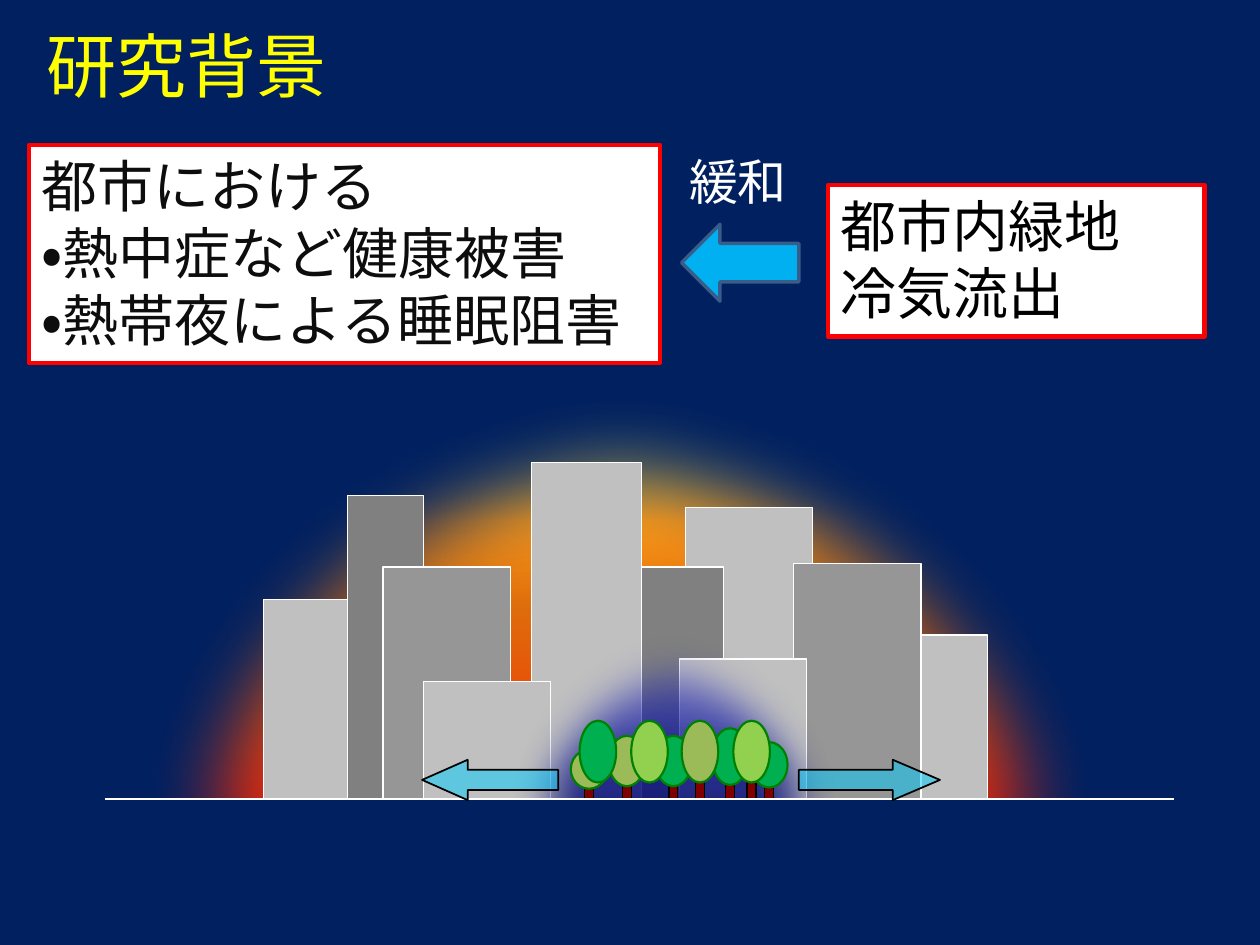
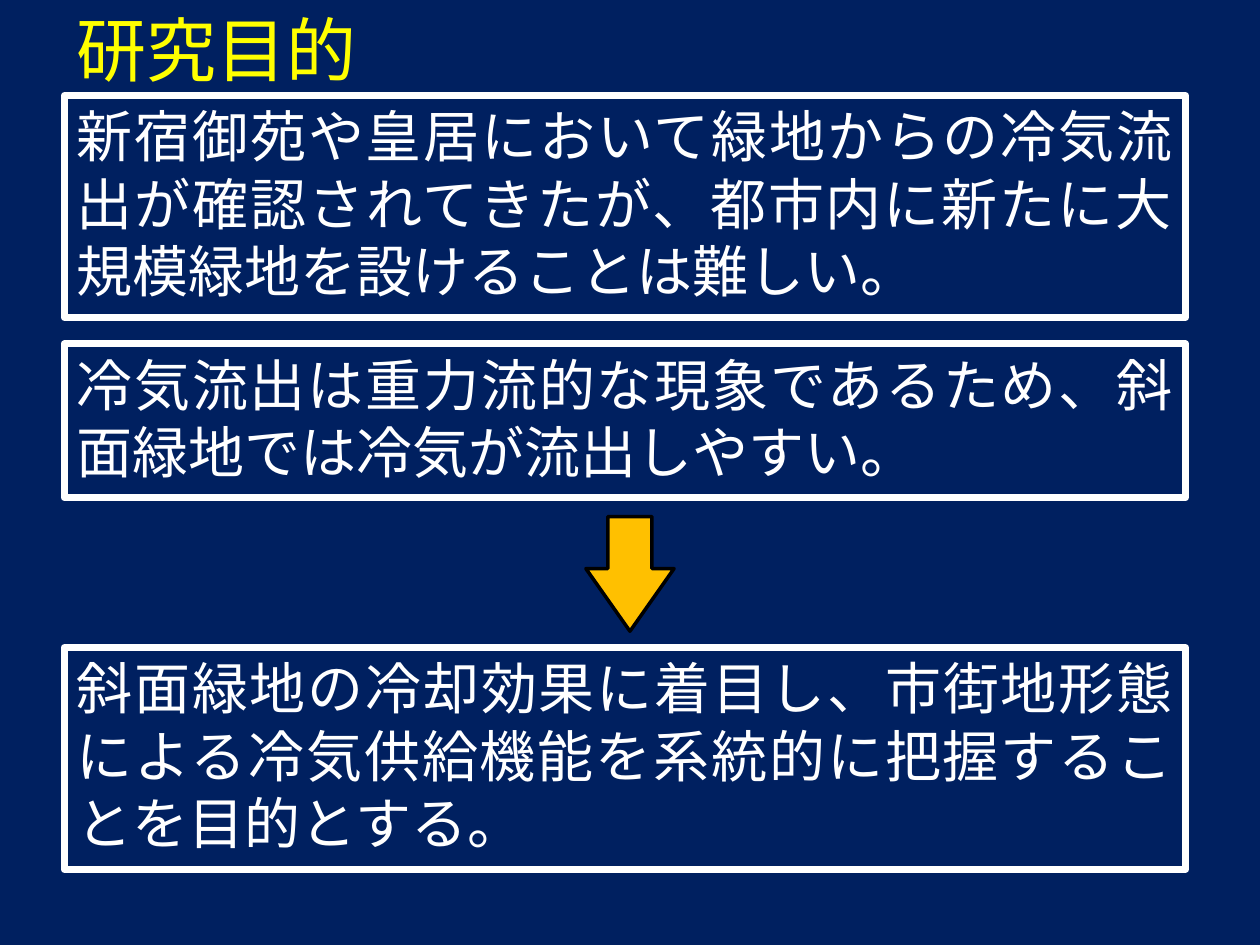
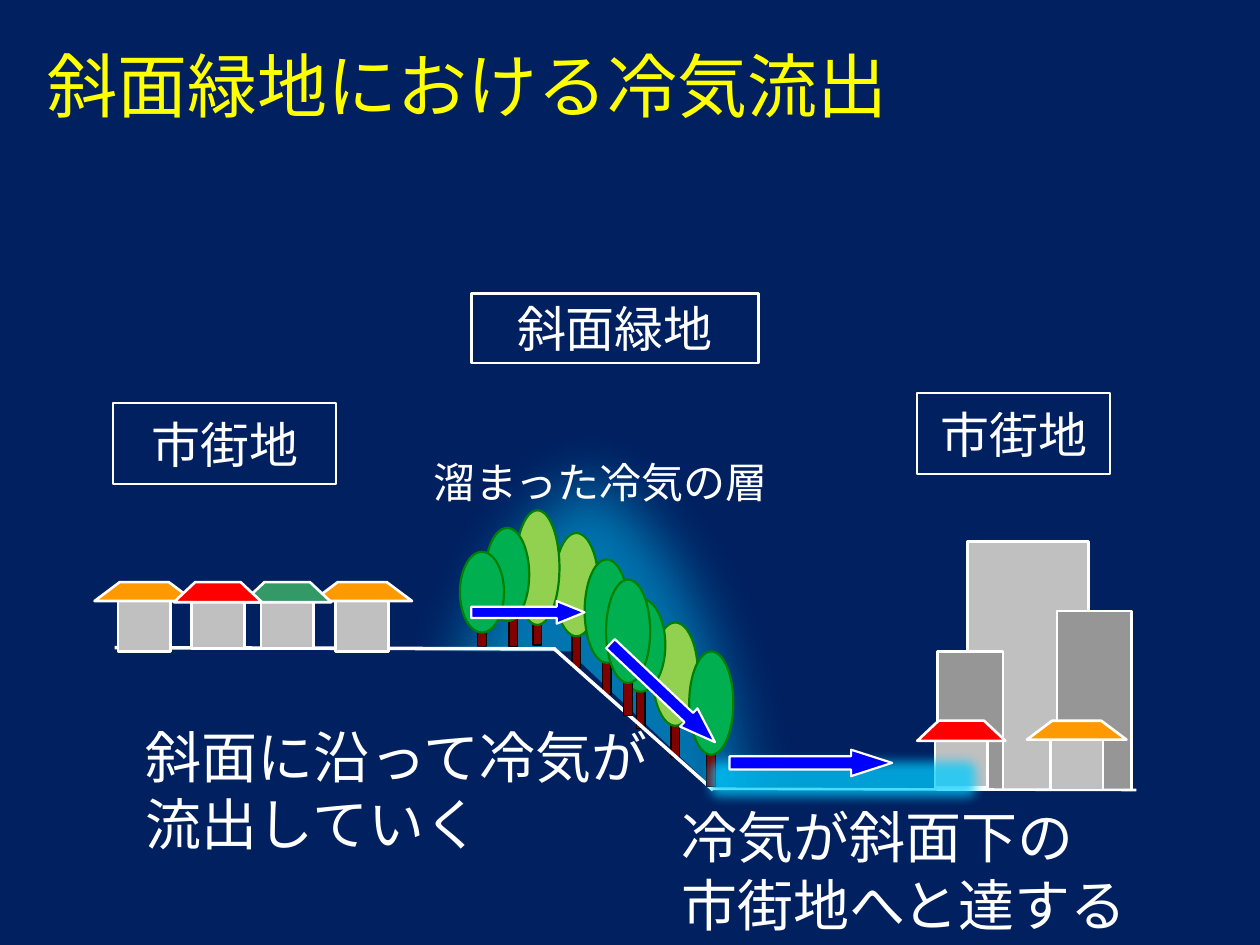
"""Build three slides on cool air flowing out of urban green space."""
from pptx import Presentation
from pptx.dml.color import RGBColor
from pptx.enum.lang import MSO_LANGUAGE_ID
from pptx.enum.shapes import MSO_CONNECTOR, MSO_SHAPE
from pptx.enum.text import MSO_ANCHOR, MSO_AUTO_SIZE, PP_ALIGN
from pptx.oxml.ns import qn
from pptx.util import Inches, Pt
from lxml.etree import SubElement

FONT = "Calibri"
NAVY, WHITE, BLACK, YELLOW, RED = "002060", "FFFFFF", "000000", "FFFF00", "FF0000"
LIGHT, MIDDLE, DARK = "C0C0C0", "969696", "808080"
GREEN, LIME, OLIVE = "00B050", "92D050", "9BBB59"
TRUNK, LEAF_EDGE = "800000", "008000"
ORANGE, TEAL, SKY, BLUE = "FF9900", "339966", "00CCFF", "0000FF"
JUSTIFY, CENTER, LEFT = PP_ALIGN.JUSTIFY, PP_ALIGN.CENTER, PP_ALIGN.LEFT
MIDDLE_ANCHOR = MSO_ANCHOR.MIDDLE

HEAT_STOPS = [(6, "FFF759", 63), (17, "FF9E1A", 100), (27, "FF7A00", 87),
              (61, "FF0300", 100), (99, "4D0808", 100), (100, "FF2D00", 56)]
COOL_STOPS = [(8, "181CC7", 35), (40, "0A128C", 82), (100, "000000", 100),
              (100, "7005D4", 100), (100, "8C3D91", 100)]
CITY_BLOCKS = [
    (5.44, 4.03, 1.01, 2.33, LIGHT), (2.09, 4.76, 0.81, 1.59, LIGHT),
    (2.76, 3.93, 0.6, 2.41, DARK), (3.04, 4.5, 1.01, 1.85, MIDDLE),
    (4.73, 4.5, 1.01, 1.85, DARK), (4.22, 3.67, 0.87, 2.67, LIGHT),
    (3.36, 5.41, 1.01, 0.96, LIGHT), (7.07, 5.04, 0.77, 1.31, LIGHT),
    (6.3, 4.47, 1.01, 1.88, MIDDLE), (5.39, 5.23, 1.01, 1.12, LIGHT)]
PARK_GROUND, PARK_CROWN_WIDTH = 6.36, 0.29
PARK_TREES = [
    (4.83, 5.84, 0.4, OLIVE, True), (5.2, 5.84, 0.4, GREEN, True),
    (5.65, 5.78, 0.45, GREEN, True), (4.53, 5.95, 0.31, OLIVE, True),
    (5.96, 5.89, 0.36, GREEN, True), (4.6, 5.72, 0.49, GREEN, False),
    (5.01, 5.72, 0.49, LIME, False), (5.41, 5.72, 0.49, OLIVE, True),
    (5.82, 5.72, 0.49, LIME, True)]

PURPOSES = [
    (0.76, 1.76, "新宿御苑や皇居において緑地からの冷気流出が確認されてきたが、都市内に新たに大規模緑地を設けることは難しい。"),
    (2.73, 1.22, "冷気流出は重力流的な現象であるため、斜面緑地では冷気が流出しやすい。"),
    (5.14, 1.76, "斜面緑地の冷却効果に着目し、市街地形態による冷気供給機能を系統的に把握することを目的とする。")]

HILL_MASKS = [(MSO_SHAPE.RECTANGLE, (0.51, 5.17, 4.09, 2.55), 0),
              (MSO_SHAPE.RIGHT_TRIANGLE, (4.53, 5.34, 2.05, 1.63), 4.9),
              (MSO_SHAPE.RECTANGLE, (3.27, 6.27, 4.1, 1.34), 0)]
BACK_TREES = [
    (5.18, 4.94, 0.36, 0.82, LIME, 6.01, 0), (4.4, 4.23, 0.35, 0.82, LIME, 5.3, 0),
    (4.64, 4.44, 0.35, 0.82, GREEN, 5.51, 0), (4.89, 4.75, 0.39, 0.74, GREEN, 5.78, 0),
    (4.09, 4.05, 0.35, 0.91, LIME, 5.12, 0), (3.85, 4.19, 0.35, 0.74, GREEN, 5.13, 0.05),
    (3.65, 4.38, 0.35, 0.64, GREEN, 5.13, 0)]
FRONT_TREES = [(4.81, 4.6, 0.35, 0.82, GREEN, 5.68, 0),
               (5.47, 5.17, 0.35, 0.82, GREEN, 6.24, 0)]
TOWN_BLOCKS = [(7.68, 4.3, 0.96, 1.97, LIGHT), (8.39, 4.85, 0.59, 1.42, MIDDLE),
               (7.44, 5.17, 0.52, 1.1, MIDDLE)]
GROUND_LINES = [((5.64, 6.26), (9.02, 6.27), 1.5), ((4.4, 5.15), (5.66, 6.27), 2),
                ((4.41, 5.15), (0.91, 5.14), 2)]
WIDE_HOUSE = {"roof_width": 0.79, "roof_height": 0.15, "inset": 0.2, "wall_drop": 0.15}
NARROW_HOUSE = {"roof_width": 0.7, "roof_height": 0.16, "inset": 0.17, "wall_drop": 0.13}
TOWN_HOUSES = [(8.15, 5.72, ORANGE, WIDE_HOUSE), (7.28, 5.72, RED, NARROW_HOUSE)]
HILL_HOUSES = [(2.48, 4.62, ORANGE, WIDE_HOUSE), (0.75, 4.62, ORANGE, WIDE_HOUSE),
               (1.93, 4.62, TEAL, NARROW_HOUSE), (1.38, 4.62, RED, NARROW_HOUSE)]
FLOW_ARROWS = [((4.69, 5.4, 1.14, 0.2), 43.3, 1.43), ((5.79, 5.95, 1.29, 0.21), 0, 1.55),
               ((3.74, 4.77, 0.9, 0.18), 0, 1.23)]
AREA_LABELS = [("市街地", (7.28, 3.12, 1.53, 0.64), 1.25),
               ("斜面緑地", (3.74, 2.33, 2.28, 0.55), 1.5),
               ("市街地", (0.9, 3.2, 1.77, 0.64), 1.25)]
FLOW_NOTES = [(["溜まった冷気の層"], (3.98, 3.59, 1.57, 0.47), 24, CENTER),
              (["斜面に沿って冷気が", "流出していく"], (1.06, 5.95, 2.68, 0.63), 32, LEFT),
              (["冷気が斜面下の", "市街地へと達する"], (5.31, 6.59, 2.68, 0.63), 32, LEFT)]


def color(value):
    return RGBColor.from_string(value)


def paint(shape, fill=None, line=None, weight=1, opacity=100, stops=None, soft=0):
    shape.shadow.inherit = False
    properties = shape.element.spPr
    if stops:
        shape.fill.gradient()
        shape.fill.gradient_angle = 270
        stop_list = properties.find(qn("a:gradFill")).find(qn("a:gsLst"))
        for old_stop in list(stop_list):
            stop_list.remove(old_stop)
        for position, value, alpha in stops:
            stop = SubElement(stop_list, qn("a:gs"), pos=str(position * 1000))
            tone = SubElement(stop, qn("a:srgbClr"), val=value)
            SubElement(tone, qn("a:alpha"), val=str(alpha * 1000))
    elif fill:
        shape.fill.solid()
        shape.fill.fore_color.rgb = color(fill)
        if opacity < 100:
            tone = properties.find(qn("a:solidFill")).find(qn("a:srgbClr"))
            SubElement(tone, qn("a:alpha"), val=str(opacity * 1000))
    else:
        shape.fill.background()
    if line:
        shape.line.color.rgb = color(line)
        shape.line.width = Pt(weight)
    else:
        shape.line.fill.background()
    if soft:
        effects = properties.find(qn("a:effectLst"))
        SubElement(effects, qn("a:softEdge"), rad=str(Inches(soft)))
    return shape


def add_part(slide, kind, place, adjust=(), rotation=0, **look):
    shape = slide.shapes.add_shape(kind, *map(Inches, place))
    for index, value in enumerate(adjust):
        shape.adjustments[index] = value
    shape.rotation = rotation
    return paint(shape, **look)


def add_line(slide, start, end, weight):
    line = slide.shapes.add_connector(MSO_CONNECTOR.STRAIGHT, *map(Inches, start + end))
    line.line.color.rgb = color(WHITE)
    line.line.width = Pt(weight)
    SubElement(line.element.spPr, qn("a:effectLst"))


def write(shape, lines, size=32, ink=WHITE, align=JUSTIFY, anchor=MSO_ANCHOR.TOP, wrap=True):
    frame = shape.text_frame
    frame.auto_size = MSO_AUTO_SIZE.NONE
    frame.word_wrap = wrap
    frame.vertical_anchor = anchor
    for index, line in enumerate(lines):
        para = frame.add_paragraph() if index else frame.paragraphs[0]
        para.alignment = align
        bullet = "・" if line.startswith("・") else ""
        for words in filter(None, (bullet, line[len(bullet):])):
            span = para.add_run()
            span.text = words
            span.font.name = FONT
            span.font.size = Pt(size)
            span.font.bold = words == bullet
            span.font.color.rgb = color(ink)
            span.font.language_id = MSO_LANGUAGE_ID.JAPANESE


def add_slide(deck, title, place):
    slide = deck.slides.add_slide(deck.slide_layouts[5])
    heading = slide.shapes.title
    heading.left, heading.top, heading.width, heading.height = map(Inches, place)
    write(heading, [title], size=40, ink=YELLOW)
    return slide


def add_trunk(slide, center, top, bottom):
    add_part(slide, MSO_SHAPE.RECTANGLE, (center - 0.035, top, 0.07, bottom - top),
             fill=TRUNK, line=BLACK, weight=0.75)


def add_crown(slide, place, leaf):
    add_part(slide, MSO_SHAPE.OVAL, place, fill=leaf, line=LEAF_EDGE, weight=1.25)


def add_trees(slide, trees):
    for left, top, width, height, leaf, ground, shift in trees:
        add_trunk(slide, left + width / 2 + shift, top + height - 0.2, ground)
        add_crown(slide, (left, top, width, height), leaf)


def add_blocks(slide, blocks, weight):
    for *place, tone in blocks:
        add_part(slide, MSO_SHAPE.RECTANGLE, place, fill=tone, line=WHITE, weight=weight)


def add_houses(slide, houses):
    for left, top, tone, form in houses:
        width, inset = form["roof_width"], form["inset"]
        wall_left = left + (width - 0.42) / 2
        add_blocks(slide, [(wall_left, top + form["wall_drop"], 0.42, 0.4, LIGHT)], 1.5)
        eave, right = top + form["roof_height"], left + width
        corners = [(left + inset, top), (right - inset, top), (right, eave)]
        outline = slide.shapes.build_freeform(Inches(left), Inches(eave))
        outline.add_line_segments([tuple(map(Inches, corner)) for corner in corners], close=True)
        paint(outline.convert_to_shape(), fill=tone, line=WHITE, weight=1.5)


def build_background(deck):
    slide = add_slide(deck, "研究背景", (0.27, 0.13, 3.7, 0.77))
    add_part(slide, MSO_SHAPE.OVAL, (0.99, 3, 7.87, 6.7), stops=HEAT_STOPS, soft=0.69)
    add_blocks(slide, CITY_BLOCKS, 0.75)
    add_part(slide, MSO_SHAPE.OVAL, (3.97, 4.93, 2.76, 2.83), stops=COOL_STOPS, soft=0.35)
    for left, top, height, leaf, has_trunk in PARK_TREES:
        if has_trunk:
            add_trunk(slide, left + PARK_CROWN_WIDTH / 2, top + height - 0.15, PARK_GROUND)
    for left, top, height, leaf, has_trunk in PARK_TREES:
        add_crown(slide, (left, top, PARK_CROWN_WIDTH, height), leaf)
    for place, lines, ink in [
            ((0.23, 1.15, 5.01, 1.73), ["都市における", "・熱中症など健康被害", "・熱帯夜による睡眠阻害"], "0D0D0D"),
            ((6.57, 1.47, 2.99, 1.2), ["都市内緑地", "冷気流出"], BLACK)]:
        box = add_part(slide, MSO_SHAPE.RECTANGLE, place, fill=WHITE, line=RED, weight=2.5)
        write(box, lines, ink=ink)
    add_part(slide, MSO_SHAPE.LEFT_ARROW, (5.41, 1.78, 0.93, 0.61), adjust=(0.5, 0.5),
             fill="00B0F0", line="385D8A", weight=2)
    label = slide.shapes.add_textbox(*map(Inches, (5.37, 1.15, 1.28, 0.57)))
    write(label, ["緩和"], size=28, align=LEFT)
    add_line(slide, (0.83, 6.35), (9.32, 6.35), 2.25)
    add_part(slide, MSO_SHAPE.RECTANGLE, (0.83, 6.36, 8.66, 1.32), fill=NAVY, line=NAVY, weight=2)
    for kind, left, width, head in [(MSO_SHAPE.LEFT_ARROW, 3.35, 1.08, 1.13),
                                    (MSO_SHAPE.RIGHT_ARROW, 6.34, 1.12, 1.17)]:
        add_part(slide, kind, (left, 6.03, width, 0.32), adjust=(0.5, head),
                 fill=SKY, opacity=50, line=BLACK)


def build_purpose(deck):
    slide = add_slide(deck, "研究目的", (0.51, 0, 2.6, 0.77))
    for top, height, statement in PURPOSES:
        box = add_part(slide, MSO_SHAPE.RECTANGLE, (0.51, top, 8.9, height), line=WHITE, weight=4)
        write(box, [statement])
    add_part(slide, MSO_SHAPE.DOWN_ARROW, (4.65, 4.1, 0.7, 0.91), adjust=(0.5, 0.71),
             fill="FFC000", line=BLACK, weight=2)


def build_outflow(deck):
    slide = add_slide(deck, "斜面緑地における冷気流出", (0.28, 0.29, 7.08, 0.77))
    add_part(slide, MSO_SHAPE.OVAL, (2.95, 3.18, 3.45, 6.22), fill=SKY, opacity=50, soft=0.5)
    for kind, place, rotation in HILL_MASKS:
        add_part(slide, kind, place, rotation=rotation, fill=NAVY)
    add_trees(slide, BACK_TREES)
    add_blocks(slide, TOWN_BLOCKS, 1.5)
    for start, end, weight in GROUND_LINES:
        add_line(slide, start, end, weight)
    add_houses(slide, TOWN_HOUSES)
    add_trees(slide, FRONT_TREES)
    add_part(slide, MSO_SHAPE.ROUNDED_RECTANGLE, (5.55, 5.96, 2.28, 0.45), adjust=(0.17,),
             fill=SKY, opacity=75, soft=0.09)
    for place, rotation, head in FLOW_ARROWS:
        add_part(slide, MSO_SHAPE.RIGHT_ARROW, place, adjust=(0.5, head), rotation=rotation,
                 fill=BLUE, line=WHITE, weight=1.25)
    for words, place, weight in AREA_LABELS:
        box = add_part(slide, MSO_SHAPE.RECTANGLE, place, line=WHITE, weight=weight)
        write(box, [words], size=28, align=CENTER, anchor=MIDDLE_ANCHOR)
    for lines, place, size, align in FLOW_NOTES:
        note = slide.shapes.add_textbox(*map(Inches, place))
        write(note, lines, size=size, align=align, anchor=MIDDLE_ANCHOR, wrap=False)
    add_houses(slide, HILL_HOUSES)


def main():
    deck = Presentation()
    deck.slide_width, deck.slide_height = Inches(10), Inches(7.5)
    backdrop = deck.slide_master.background.fill
    backdrop.solid()
    backdrop.fore_color.rgb = color(NAVY)
    build_background(deck)
    build_purpose(deck)
    build_outflow(deck)
    deck.save("out.pptx")


if __name__ == "__main__":
    main()
